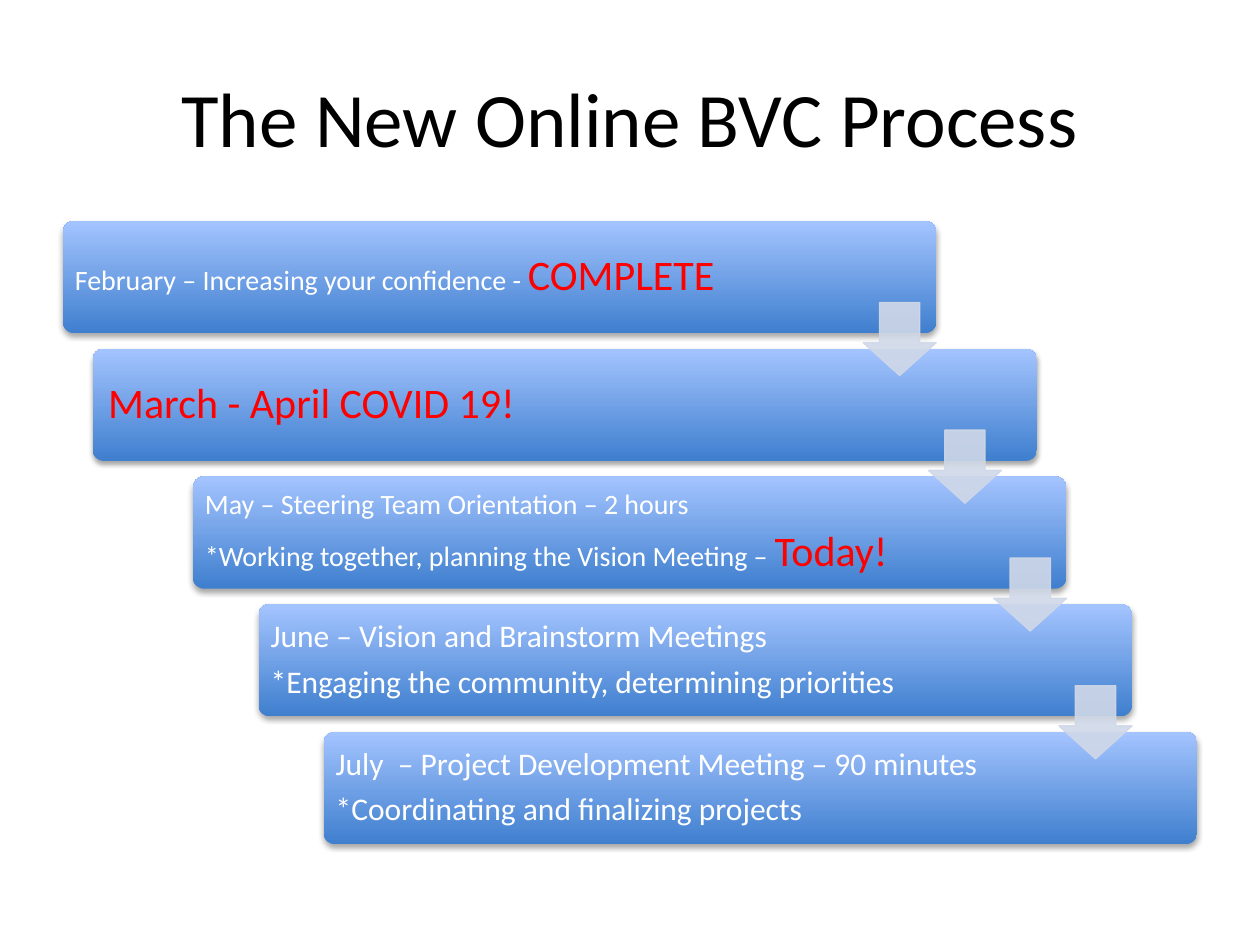
from lxml import etree
from pptx import Presentation
from pptx.dml.color import RGBColor
from pptx.enum.shapes import MSO_SHAPE
from pptx.enum.text import MSO_ANCHOR, PP_ALIGN
from pptx.oxml import parse_xml
from pptx.oxml.ns import qn
from pptx.util import Pt

BAR, ARROW = MSO_SHAPE.ROUNDED_RECTANGLE, MSO_SHAPE.DOWN_ARROW
LEFT, CENTER, MIDDLE = PP_ALIGN.LEFT, PP_ALIGN.CENTER, MSO_ANCHOR.MIDDLE
COLORS = {
    "title": "000000", "text": "FFFFFF", "alert": "FF0000",
    "bar_bottom": "3F7FCE", "bar_top": "A4C4FF", "arrow": "D0D8E8",
}
SHADOW = (
    '<a:effectLst xmlns:a="http://schemas.openxmlformats.org/drawingml/2006/main">'
    '<a:outerShdw blurRad="39370" dist="22860" dir="5400000" rotWithShape="0">'
    '<a:srgbClr val="000000"><a:alpha val="35000"/></a:srgbClr>'
    '</a:outerShdw></a:effectLst>'
)


def rgb(name):
    return RGBColor.from_string(COLORS[name])


def write(frame, paragraphs, align=LEFT, inset=5, line_spacing=0.9, after=0.35):
    """Fill a frame; each paragraph is a list of (text, size, colour) runs."""
    frame.word_wrap = True
    frame.vertical_anchor = MIDDLE
    frame.margin_left = frame.margin_right = Pt(inset)
    frame.margin_top = frame.margin_bottom = Pt(4)
    for index, runs in enumerate(paragraphs):
        paragraph = frame.add_paragraph() if index else frame.paragraphs[0]
        paragraph.alignment = align
        paragraph.line_spacing = line_spacing
        paragraph.space_after = Pt(after * runs[0][1])
        for text, size, color in runs:
            run = paragraph.add_run()
            run.text = text
            run.font.name = "Calibri"
            run.font.size = Pt(size)
            run.font.color.rgb = rgb(color)


prs = Presentation()
prs.slide_width, prs.slide_height = Pt(720), Pt(540)
slide = prs.slides.add_slide(prs.slide_layouts[5])

title = slide.shapes.title
title.left, title.top, title.width, title.height = Pt(36), Pt(21.6), Pt(648), Pt(90)
write(title.text_frame, [[("The New Online BVC Process", 44, "title")]],
      align=CENTER, line_spacing=1.0, after=0)

# Monthly steps: left, width, text inset, paragraphs
steps = [
    (36, 499, 5, [[("February – Increasing your confidence - ", 16, "text"),
                   ("COMPLETE", 24, "alert")]]),
    (53, 539.5, 7, [[("March - April COVID 19!", 24, "alert")]]),
    (110.3, 499, 5, [[("May – Steering Team Orientation – 2 hours", 16, "text")],
                     [("*Working together, planning the Vision Meeting – ", 16, "text"),
                      ("Today!", 24, "alert")]]),
    (147.8, 499, 5, [[("June – Vision and Brainstorm Meetings", 18, "text")],
                     [("*Engaging the community, determining priorities", 18, "text")]]),
    (185, 499, 5, [[("July  – Project Development Meeting – 90 minutes", 18, "text")],
                   [("*Coordinating and finalizing projects", 18, "text")]]),
]
first_top, step_pitch, bar_height = 126.2, 73, 64.2
for index, (left, width, inset, paragraphs) in enumerate(steps):
    bar = slide.shapes.add_shape(BAR, Pt(left), Pt(first_top + index * step_pitch),
                                 Pt(width), Pt(bar_height))
    bar.adjustments[0] = 0.1
    bar.fill.gradient()
    bar.fill.gradient_angle = 90
    for stop, color in zip(bar.fill.gradient_stops, ("bar_bottom", "bar_top")):
        stop.color.rgb = rgb(color)
    bar.line.fill.background()
    bar._element.spPr.append(parse_xml(SHADOW))
    write(bar.text_frame, paragraphs, inset=inset)

arrow_left, arrow_top, arrow_shift, arrow_size = 493.2, 172.8, 37.3, 41.8
for index in range(len(steps) - 1):
    arrow = slide.shapes.add_shape(ARROW, Pt(arrow_left + index * arrow_shift),
                                   Pt(arrow_top + index * step_pitch),
                                   Pt(arrow_size), Pt(arrow_size))
    arrow.adjustments[0], arrow.adjustments[1] = 0.55, 0.45
    arrow.shadow.inherit = False
    arrow.fill.solid()
    arrow.fill.fore_color.rgb = rgb("arrow")
    arrow.line.color.rgb = rgb("arrow")
    arrow.line.width = Pt(0.75)
    for color in arrow._element.spPr.iter(qn("a:srgbClr")):
        etree.SubElement(color, qn("a:alpha")).set("val", "90000")

prs.save("out.pptx")
